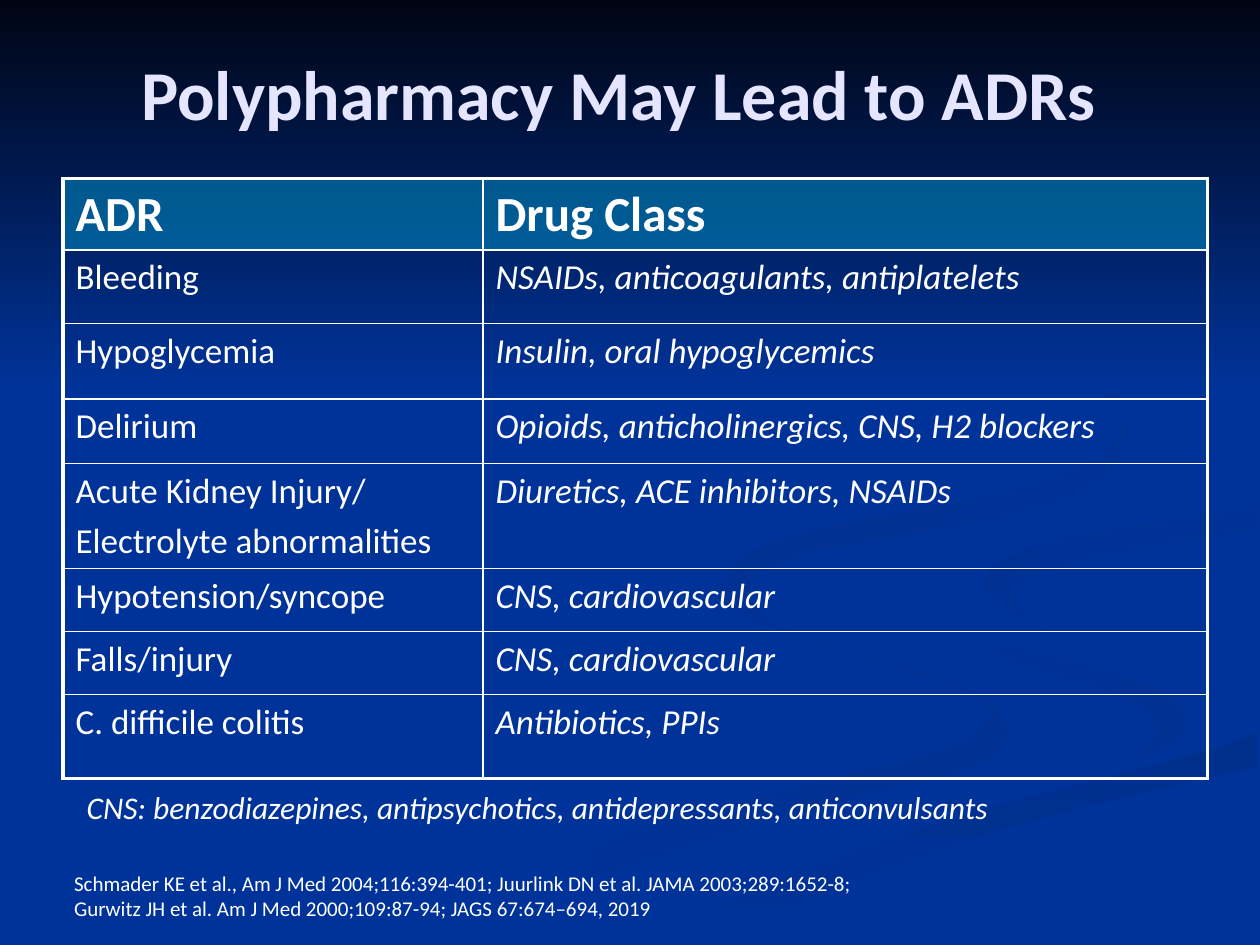
from dataclasses import dataclass

from lxml.etree import SubElement
from pptx import Presentation
from pptx.dml.color import RGBColor
from pptx.enum.text import MSO_ANCHOR, PP_ALIGN
from pptx.oxml.ns import qn
from pptx.util import Pt


@dataclass(frozen=True)
class Theme:
    font: str = "Calibri"
    blue: str = "003399"
    night: str = "000514"
    white: str = "FFFFFF"
    lavender: str = "E5E5FF"
    header: str = "0099CC"
    header_alpha: int = 49000
    title_size: int = 40
    header_size: int = 28
    body_size: int = 20
    note_size: int = 18
    citation_size: int = 12
    outer_line: float = 2.25
    inner_line: float = 1


THEME = Theme()
WIDTH, HEIGHT = 720, 540

INNER_SWEEP = [
    (562, 398), (545, 391), (526, 384), (491, 374), (462, 365), (442, 357),
    (428, 349), (420, 343), (415, 338), (414, 330), (410, 337), (412, 343),
    (418, 348), (433, 356), (454, 364), (489, 374), (514, 382), (541, 391),
    (559, 398), (564, 402), (566, 408), (564, 413), (557, 420), (539, 428),
    (514, 436), (469, 446), (417, 460), (359, 476), (300, 497), (243, 523),
    (216, 539), (260, 539), (310, 514), (359, 495), (406, 479), (449, 466),
    (503, 452), (544, 442), (562, 436), (570, 430), (574, 423), (576, 418),
    (572, 408), (566, 400),
]
OUTER_CURL = [
    (679, 410), (673, 401), (662, 394), (639, 385), (612, 377), (584, 371),
    (557, 362), (536, 353), (526, 345), (521, 334), (522, 341), (528, 351),
    (537, 360), (552, 369), (574, 377), (603, 386), (625, 392), (642, 398),
    (653, 405), (659, 411), (661, 418), (656, 427), (644, 436), (660, 430),
    (671, 424), (678, 418),
]
LOWER_EDGE = [
    (374, 538), (410, 518), (454, 499), (501, 482), (550, 466), (574, 459),
    (624, 446), (674, 433), (703, 425), (719, 418),
]
LOWER_SWEEP = LOWER_EDGE + [
    (719, 438), (683, 446), (620, 461), (565, 476), (520, 491), (482, 505),
    (454, 518), (432, 528), (411, 539), (362, 539),
]
BROAD_SWEEP = [
    (522, 334), (526, 345), (536, 353), (558, 362), (585, 371), (613, 377),
    (640, 385), (662, 394), (673, 401), (679, 410), (677, 420), (667, 427),
    (642, 436), (607, 445), (562, 456), (507, 472), (446, 492), (379, 521),
    (343, 539), (362, 539), *LOWER_EDGE, (719, 387), (690, 382), (651, 374),
    (611, 362), (588, 354), (572, 346), (564, 338), (563, 331), (570, 322),
    (584, 315), (612, 307), (647, 301), (697, 294), (719, 289), (719, 279),
    (693, 284), (662, 289), (613, 296), (567, 304), (544, 311), (527, 321),
]
RIGHT_HOOK = [
    (562, 331), (563, 338), (570, 344), (580, 351), (595, 357), (585, 351),
    (580, 343), (580, 337), (588, 330), (607, 323), (632, 316), (674, 309),
    (699, 305), (719, 302), (719, 289), (697, 294), (647, 301), (611, 307),
    (591, 312), (575, 318), (565, 326),
]
UPPER_CURL = [
    (492, 310), (532, 303), (566, 297), (594, 289), (616, 282), (631, 272),
    (640, 261), (644, 248), (641, 233), (634, 221), (622, 210), (607, 198),
    (583, 184), (562, 174), (549, 168), (580, 183), (609, 201), (626, 215),
    (637, 230), (640, 241), (638, 251), (631, 259), (613, 269), (589, 278),
    (549, 287), (507, 294), (467, 302), (443, 309), (424, 318), (418, 325),
    (415, 333), (418, 341), (429, 351), (448, 360), (437, 353), (430, 346),
    (427, 338), (429, 332), (436, 325), (449, 320), (467, 314),
]
NIGHT_SKY = [(0, 0), (0, 222), (WIDTH, 222), (WIDTH, 0)]

BACKDROP = [
    (INNER_SWEEP, THEME.blue, "003193", 0),
    (OUTER_CURL, THEME.blue, "003193", 45),
    (LOWER_SWEEP, "002F8C", THEME.blue, 90),
    (BROAD_SWEEP, THEME.blue, THEME.blue, 0),
    (RIGHT_HOOK, "003091", THEME.blue, 45),
    (UPPER_CURL, "002F8E", THEME.blue, 45),
    (NIGHT_SKY, THEME.night, THEME.blue, 90),
]

REACTIONS = [
    ("ADR", "Drug Class", 41),
    ("Bleeding", "NSAIDs, anticoagulants, antiplatelets", 42),
    ("Hypoglycemia", "Insulin, oral hypoglycemics", 43),
    ("Delirium", "Opioids, anticholinergics, CNS, H2 blockers", 37),
    ("Acute Kidney Injury/\nElectrolyte abnormalities",
     "Diuretics, ACE inhibitors, NSAIDs", 60),
    ("Hypotension/syncope", "CNS, cardiovascular", 36),
    ("Falls/injury", "CNS, cardiovascular", 36),
    ("C. difficile colitis", "Antibiotics, PPIs", 48),
]


def rgb(code):
    return RGBColor.from_string(code)


def write(frame, text, *, size, color=THEME.white, bold=False, italic=False,
          align=PP_ALIGN.LEFT, gap=0):
    frame.word_wrap = True
    for index, line in enumerate(text.split("\n")):
        paragraph = frame.add_paragraph() if index else frame.paragraphs[0]
        paragraph.alignment = align
        paragraph.space_before = Pt(gap if index else 0)
        run = paragraph.add_run()
        run.text = line
        font = run.font
        font.name, font.size = THEME.font, Pt(size)
        font.bold, font.italic = bold, italic
        font.color.rgb = rgb(color)


def add_text(slide, box, text, *, anchor=MSO_ANCHOR.TOP, **style):
    frame = slide.shapes.add_textbox(*map(Pt, box)).text_frame
    frame.vertical_anchor = anchor
    write(frame, text, **style)


def add_ribbon(slide, outline, start, end, angle):
    builder = slide.shapes.build_freeform(*outline[0], scale=Pt(1))
    builder.add_line_segments(outline[1:], close=True)
    ribbon = builder.convert_to_shape()
    ribbon.shadow.inherit = False
    ribbon.line.fill.background()
    if start == end:
        ribbon.fill.solid()
        ribbon.fill.fore_color.rgb = rgb(start)
        return
    ribbon.fill.gradient()
    ribbon.fill.gradient_angle = (360 - angle) % 360
    for stop, color in zip(ribbon.fill.gradient_stops, (start, end)):
        stop.color.rgb = rgb(color)


def rule_cell(cell, outer_sides):
    properties = cell._tc.get_or_add_tcPr()
    for position, side in enumerate("LRTB"):
        weight = THEME.outer_line if side in outer_sides else THEME.inner_line
        border = properties.makeelement(qn(f"a:ln{side}"), {"w": str(Pt(weight))})
        properties.insert(position, border)
        fill = SubElement(border, qn("a:solidFill"))
        SubElement(fill, qn("a:srgbClr"), val=THEME.white)


def fill_cell(cell, is_header):
    if not is_header:
        cell.fill.background()
        return
    cell.fill.solid()
    cell.fill.fore_color.rgb = rgb(THEME.header)
    tint = cell._tc.tcPr.find(qn("a:solidFill")).find(qn("a:srgbClr"))
    SubElement(tint, qn("a:alpha"), val=str(THEME.header_alpha))


def add_reaction_table(slide):
    heights = [height for *_, height in REACTIONS]
    last = len(REACTIONS) - 1
    table = slide.shapes.add_table(
        len(REACTIONS), 2, Pt(36), Pt(102), Pt(654), Pt(sum(heights))).table
    table.first_row = table.horz_banding = False
    table.columns[0].width, table.columns[1].width = Pt(240), Pt(414)
    for r, (*entries, height) in enumerate(REACTIONS):
        table.rows[r].height = Pt(height)
        is_header = r == 0
        for c, entry in enumerate(entries):
            cell = table.cell(r, c)
            fill_cell(cell, is_header)
            rule_cell(cell, "LR"[c] + "T" * is_header + "B" * (r == last))
            write(cell.text_frame, entry, bold=is_header, gap=4,
                  size=THEME.header_size if is_header else THEME.body_size,
                  italic=c == 1 and not is_header)


def main():
    deck = Presentation()
    deck.slide_width, deck.slide_height = Pt(WIDTH), Pt(HEIGHT)
    slide = deck.slides.add_slide(deck.slide_layouts[6])
    slide.background.fill.solid()
    slide.background.fill.fore_color.rgb = rgb(THEME.blue)
    for outline, start, end, angle in BACKDROP:
        add_ribbon(slide, outline, start, end, angle)
    add_text(slide, (29.5, 17, 648, 72), "Polypharmacy May Lead to ADRs",
             size=THEME.title_size, color=THEME.lavender, bold=True,
             align=PP_ALIGN.CENTER, anchor=MSO_ANCHOR.MIDDLE)
    add_reaction_table(slide)
    add_text(slide, (35.3, 494, 468, 46),
             "Schmader KE et al., Am J Med 2004;116:394-401; "
             "Juurlink DN et al. JAMA 2003;289:1652-8;\n"
             "Gurwitz JH et al. Am J Med 2000;109:87-94; JAGS 67:674–694, 2019",
             size=THEME.citation_size)
    add_text(slide, (42.5, 446.5, 593, 29),
             "CNS: benzodiazepines, antipsychotics, antidepressants, anticonvulsants",
             size=THEME.note_size, italic=True)
    deck.save("out.pptx")


if __name__ == "__main__":
    main()
